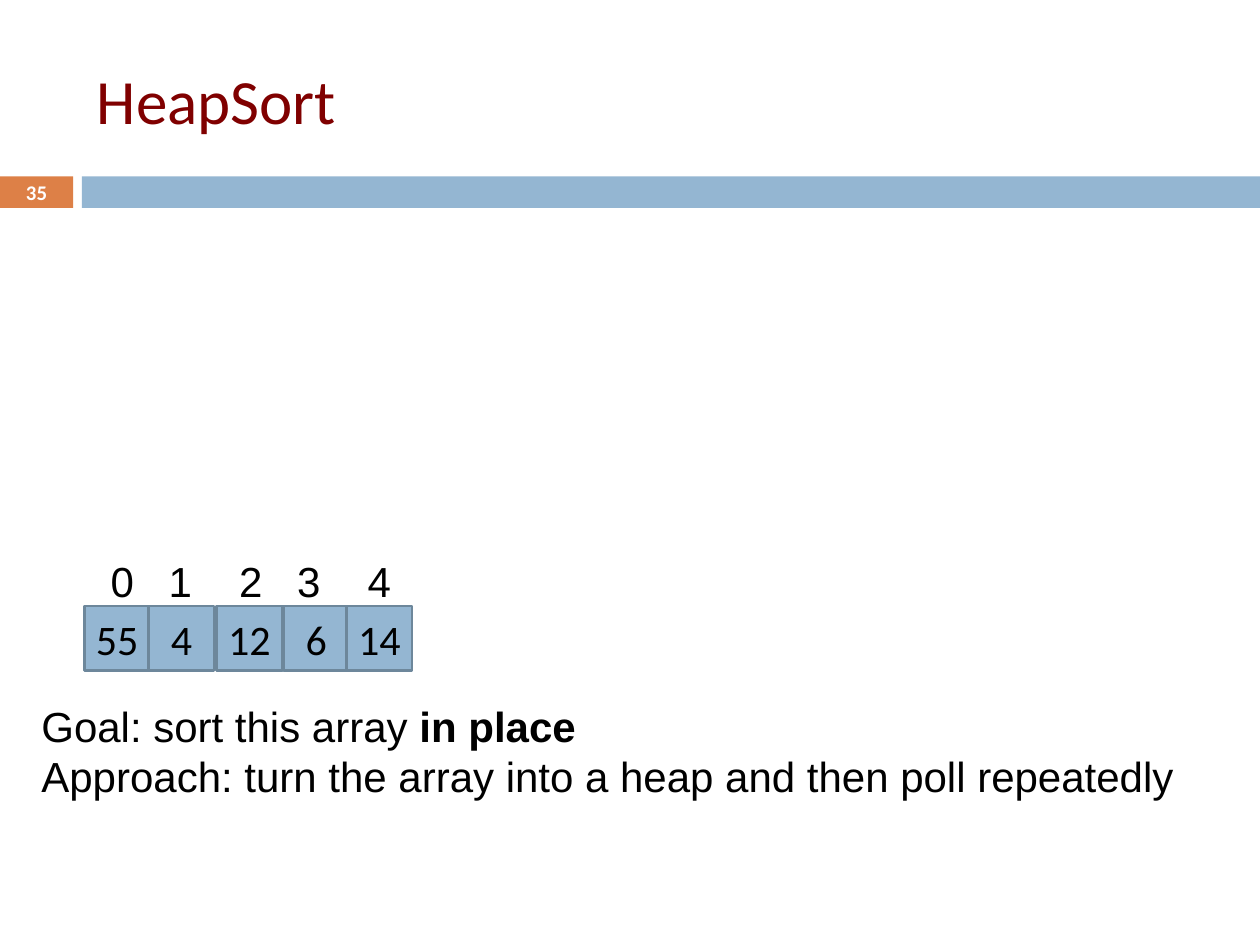
from lxml import etree
from pptx import Presentation
from pptx.dml.color import RGBColor
from pptx.enum import shapes, text
from pptx.oxml.ns import qn
from pptx.util import Inches, Pt

MAROON = RGBColor(0x80, 0x00, 0x00)
ORANGE = RGBColor(0xDD, 0x80, 0x47)
BLUE = RGBColor(0x94, 0xB6, 0xD2)
SLATE = RGBColor(0x6D, 0x87, 0x9B)
BLACK = RGBColor(0x00, 0x00, 0x00)
WHITE = RGBColor(0xFF, 0xFF, 0xFF)


def add_span(para, wording, size, font, color, bold=False):
    span = para.add_run()
    span.text = wording
    span.font.size = Pt(size)
    span.font.name = font
    span.font.color.rgb = color
    span.font.bold = bold


def set_frame(shape, anchor, insets=(0.1, 0.05, 0.1, 0.05), wrap=True):
    frame = shape.text_frame
    frame.word_wrap = wrap
    frame.vertical_anchor = anchor
    (frame.margin_left, frame.margin_top,
     frame.margin_right, frame.margin_bottom) = map(Inches, insets)
    return frame


def add_text(page, box, anchor=text.MSO_ANCHOR.TOP, **options):
    return set_frame(page.shapes.add_textbox(*map(Inches, box)), anchor, **options)


def add_rect(page, box, fill, line=None):
    rect = page.shapes.add_shape(shapes.MSO_SHAPE.RECTANGLE, *map(Inches, box))
    rect.shadow.inherit = False
    rect.fill.solid()
    rect.fill.fore_color.rgb = fill
    if line is None:
        rect.line.fill.background()
    else:
        rect.line.color.rgb = line
        rect.line.width = Pt(1.5)
    return rect


def add_title(page, box, wording):
    frame = add_text(page, box, text.MSO_ANCHOR.MIDDLE,
                     insets=(0.1, 0.05, 0.14, 0.05))
    add_span(frame.paragraphs[0], wording, 36, "Calibri", MAROON)


def add_number_band(page, box, number):
    left, top, width, height = box
    tab_width, gap = 0.58, 0.07
    bar_left = left + tab_width + gap
    add_rect(page, (left, top, tab_width, height), ORANGE)
    add_rect(page, (bar_left, top, left + width - bar_left, height), BLUE)
    frame = add_text(page, (left, top - 0.01, tab_width, height + 0.02),
                     text.MSO_ANCHOR.MIDDLE)
    para = frame.paragraphs[0]
    para.alignment = text.PP_ALIGN.CENTER
    add_span(para, number, 11.9, "Calibri", WHITE, bold=True)


def add_array(page, box, cells):
    left, top, width, height = box
    for offset, value in cells:
        cell = add_rect(page, (left + offset, top, width, height), BLUE, SLATE)
        frame = set_frame(cell, text.MSO_ANCHOR.MIDDLE, insets=(0.04, 0, 0.04, 0))
        para = frame.paragraphs[0]
        para.alignment = text.PP_ALIGN.CENTER
        para.space_before = Pt(14)
        add_span(para, value, 24, "Calibri", BLACK)


def add_indices(page, box, stops):
    para = add_text(page, box).paragraphs[0]
    # Tab stops line the indices up with the cells
    tabs = etree.SubElement(para._p.get_or_add_pPr(), qn("a:tabLst"))
    for stop in stops:
        etree.SubElement(tabs, qn("a:tab"), pos=str(Inches(stop)), algn="l")
    labels = "\t".join(str(index) for index in range(len(stops) + 1))
    add_span(para, labels, 24, "Arial", BLACK)


def add_notes_text(page, box, lines):
    frame = add_text(page, box, wrap=False)
    for number, spans in enumerate(lines):
        para = frame.add_paragraph() if number else frame.paragraphs[0]
        for wording, bold in spans:
            add_span(para, wording, 24, "Arial", BLACK, bold)


def main():
    deck = Presentation()
    deck.slide_width, deck.slide_height = Inches(10), Inches(7.5)
    page = deck.slides.add_slide(deck.slide_layouts[6])

    # Heading
    add_number_band(page, (0, 1.4, 10, 0.25), "35")
    add_title(page, (0.67, 0.25, 8.92, 1.08), "HeapSort")

    # Array with its indices
    add_array(page, (0.67, 4.81, 0.52, 0.51),
              [(0, "55"), (0.51, "4"), (1.05, "12"), (1.58, "6"), (2.08, "14")])
    add_indices(page, (0.78, 4.36, 2.44, 0.5), (0.46, 1.02, 1.48, 2.04))

    # Goal and approach
    add_notes_text(page, (0.23, 5.51, 9.28, 0.91), [
        [("Goal: sort this array ", False), ("in place", True)],
        [("Approach: turn the array into a heap and then poll repeatedly", False)],
    ])

    deck.save("out.pptx")


if __name__ == "__main__":
    main()
